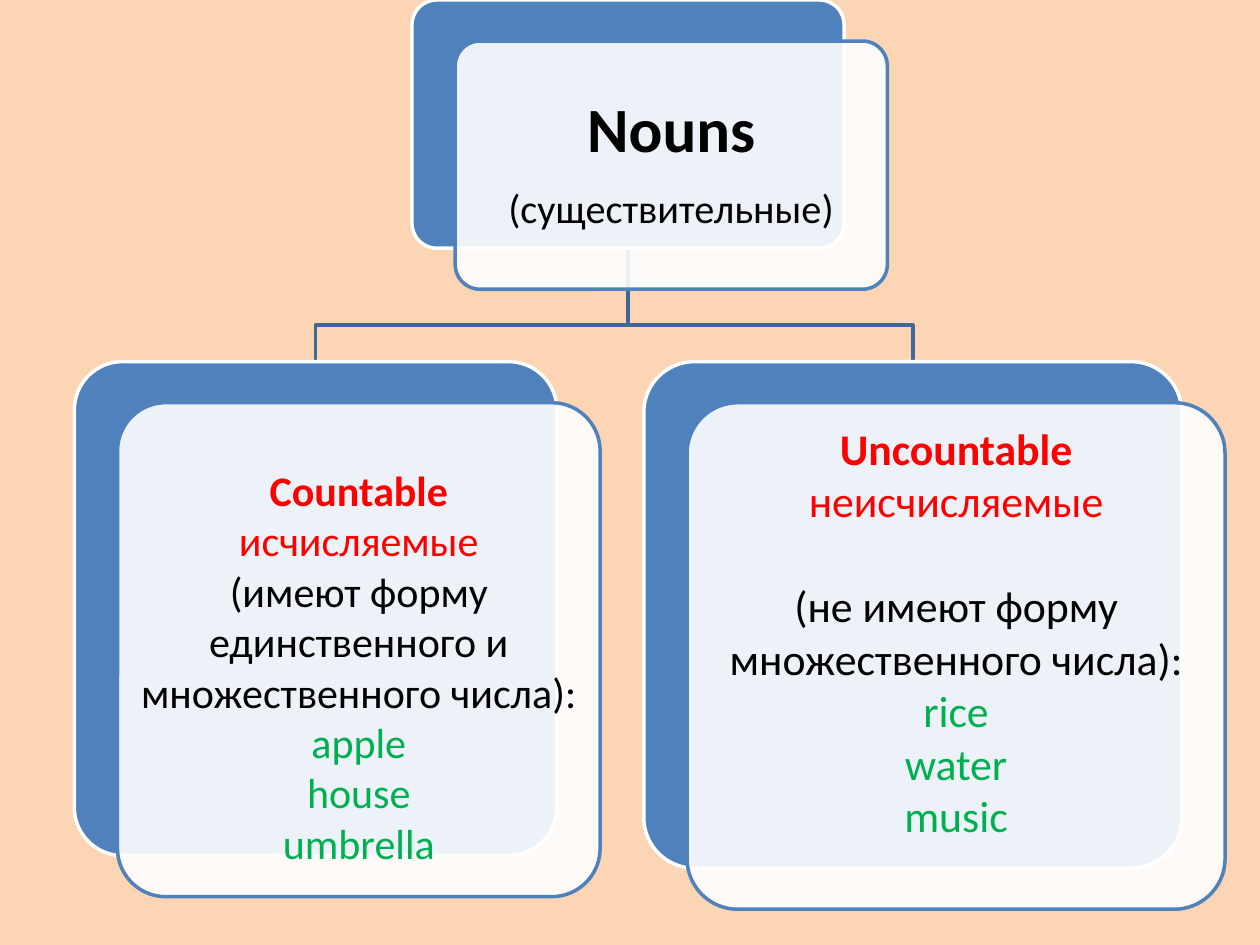
from collections import namedtuple

from lxml import etree
from pptx import Presentation
from pptx.dml.color import RGBColor
from pptx.enum.shapes import MSO_SHAPE
from pptx.enum.text import MSO_ANCHOR, PP_ALIGN
from pptx.oxml.ns import qn
from pptx.util import Inches, Pt

ROUNDED = MSO_SHAPE.ROUNDED_RECTANGLE
CENTER = PP_ALIGN.CENTER
TOP, MIDDLE = MSO_ANCHOR.TOP, MSO_ANCHOR.MIDDLE

COLORS = {
    "background": "FCD5B5", "blue": "4F81BD", "connector": "3F6797",
    "white": "FFFFFF", "black": "000000", "red": "FF0000", "green": "00B050",
}
FONT = "Calibri"
CELL = Inches(0.1)  # the slide is a grid of 100 columns by 75 rows
SHIFT_X, SHIFT_Y = 3.43, 3.26  # offset of the front card, in cells
ELBOW_RISE = 2.9  # height of the branch bar above the child cards

Box = namedtuple("Box", "left top width height")
Line = namedtuple("Line", "text size color bold before after spacing",
                  defaults=("black", False, 0, 0, 1.0))


def cells(*values):
    return [round(value * CELL) for value in values]


def color(name):
    return RGBColor.from_string(COLORS[name])


def set_line(shape, name):
    shape.shadow.inherit = False
    shape.line.color.rgb = color(name)
    shape.line.width = Pt(2)


def add_branch(slide, parent, child):
    """Elbow from the bottom centre of the parent to the top centre of the child."""
    start_x = parent.left + parent.width / 2
    end_x = child.left + child.width / 2
    bar_y = child.top - ELBOW_RISE
    builder = slide.shapes.build_freeform(
        *cells(start_x, parent.top + parent.height))
    points = [(start_x, bar_y), (end_x, bar_y), (end_x, child.top)]
    builder.add_line_segments([cells(*point) for point in points], close=False)
    branch = builder.convert_to_shape()
    branch.fill.background()
    set_line(branch, "connector")


def add_panel(slide, box, fill, outline, opacity=None):
    panel = slide.shapes.add_shape(ROUNDED, *cells(*box))
    panel.adjustments[0] = 0.1
    panel.fill.solid()
    panel.fill.fore_color.rgb = color(fill)
    set_line(panel, outline)
    if opacity is not None:
        fill_color = panel.fill._xPr.find(".//" + qn("a:srgbClr"))
        etree.SubElement(fill_color, qn("a:alpha"), val=str(opacity * 1000))


def add_text(slide, box, lines, anchor, inset, top_inset):
    frame = slide.shapes.add_textbox(*cells(*box)).text_frame
    frame.word_wrap = True
    frame.vertical_anchor = anchor
    frame.margin_left, frame.margin_right, frame.margin_bottom = cells(*[inset] * 3)
    frame.margin_top = cells(top_inset)[0]
    frame.text = "\n".join(line.text for line in lines)
    for paragraph, line in zip(frame.paragraphs, lines):
        paragraph.alignment = CENTER
        paragraph.line_spacing = line.spacing
        paragraph.space_before = Pt(line.before)
        paragraph.space_after = Pt(line.after)
        font = paragraph.runs[0].font
        font.name, font.size, font.bold = FONT, Pt(line.size), line.bold
        font.color.rgb = color(line.color)


def add_card(slide, box, lines, anchor, inset, top_inset):
    """Blue back panel with a translucent text panel shifted over it."""
    front = box._replace(left=box.left + SHIFT_X, top=box.top + SHIFT_Y)
    add_panel(slide, box, "blue", "white")
    add_panel(slide, front, "white", "blue", opacity=90)
    add_text(slide, front, lines, anchor, inset, top_inset)


def noun_lines(size, title, translation, rule, examples, gap=0):
    return [
        Line(title, size, "red", bold=True),
        Line(translation, size, "red"),
        Line(rule, size, before=gap),
        *[Line(example, size, "green") for example in examples],
    ]


def main():
    presentation = Presentation()
    presentation.slide_width, presentation.slide_height = cells(100, 75)
    slide = presentation.slides.add_slide(presentation.slide_layouts[6])
    slide.background.fill.solid()
    slide.background.fill.fore_color.rgb = color("background")

    root = Box(32.7, 0, 34.3, 19.7)
    countable = Box(5.9, 28.7, 38.3, 39.2)
    uncountable = Box(51.1, 28.7, 42.7, 40.2)

    # Branches lie behind the cards
    for child in (uncountable, countable):
        add_branch(slide, root, child)

    # Root card
    add_card(slide, root, [
        Line("Nouns", 36, bold=True, after=12.6, spacing=0.9),
        Line("(существительные)", 23, spacing=0.9),
    ], MIDDLE, 1.5, 1.5)

    # Child cards
    add_card(slide, countable, noun_lines(
        24, "Countable", "исчисляемые",
        "(имеют форму единственного и множественного числа):",
        ["apple", "house", "umbrella"]), TOP, 1.3, 4.9)
    add_card(slide, uncountable, noun_lines(
        25, "Uncountable", "неисчисляемые",
        "(не имеют форму множественного числа):",
        ["rice", "water", "music"], gap=30), TOP, 1, 1.5)

    presentation.save("out.pptx")


if __name__ == "__main__":
    main()
